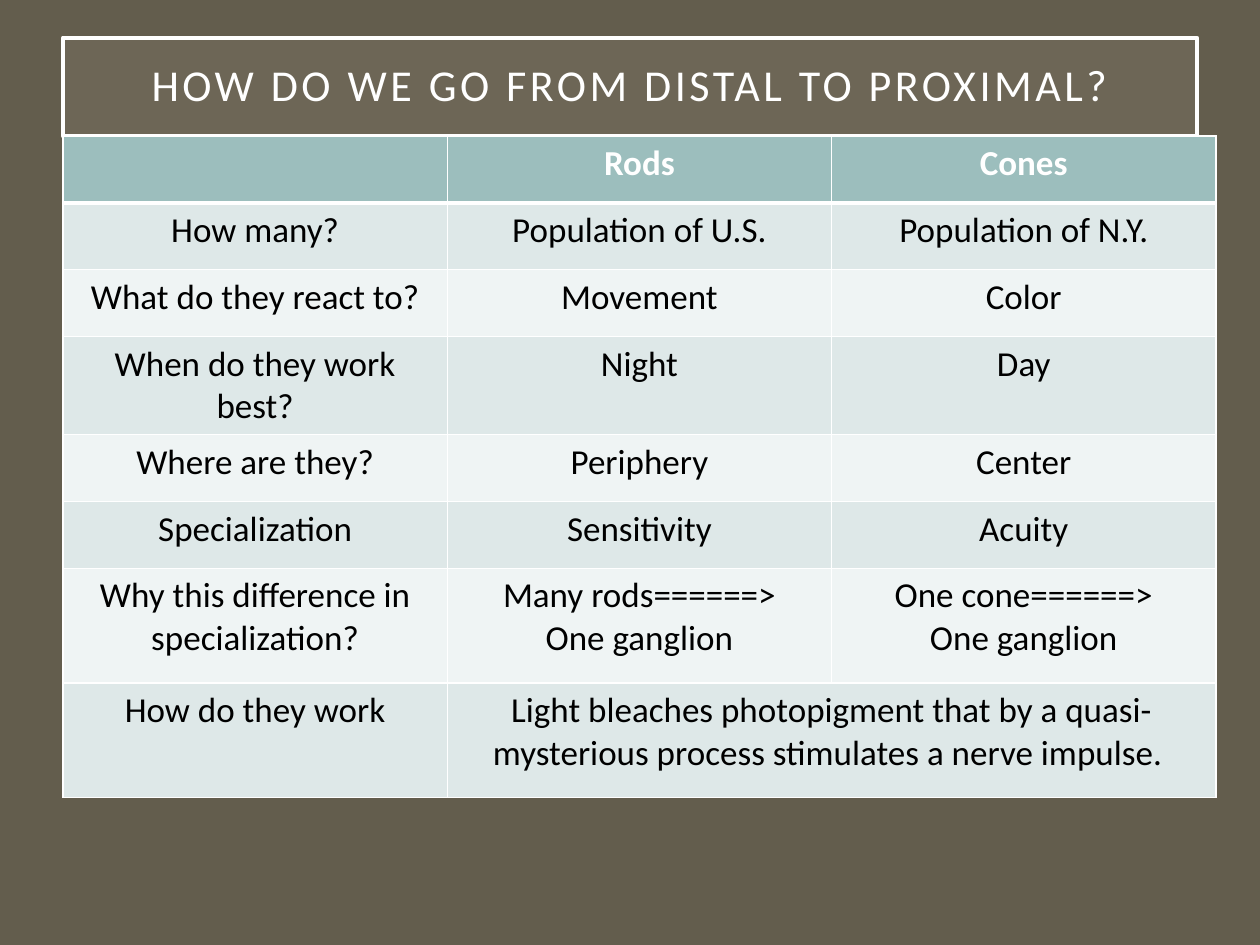
"""Build a slide with a table that compares rods and cones."""
import lxml.etree
import pptx
import pptx.dml.color
import pptx.enum.shapes
import pptx.enum.text
import pptx.oxml.ns
import pptx.util

COLORS = {
    "background": "635D4D", "title": "A7A08E", "white": "FFFFFF", "text": "000000",
    "header": "9CBEBD", "odd": "DEE8E8", "even": "EFF4F4",
}
COMPARISON = [
    ("", "Rods", "Cones"),
    ("How many?", "Population of U.S.", "Population of N.Y."),
    ("What do they react to?", "Movement", "Color"),
    ("When do they work best?", "Night", "Day"),
    ("Where are they?", "Periphery", "Center"),
    ("Specialization", "Sensitivity", "Acuity"),
    ("Why this difference in specialization?",
     "Many rods======>\nOne ganglion", "One cone======>\nOne ganglion"),
    ("How do they work",
     "Light bleaches photopigment that by a quasi-mysterious process "
     "stimulates a nerve impulse. ", ""),
]
ROW_HEIGHTS = [0.53] * 6 + [0.91] * 2
COLUMN_WIDTH = 3.05
inches = pptx.util.Inches
qn = pptx.oxml.ns.qn


def rgb(name):
    return pptx.dml.color.RGBColor.from_string(COLORS[name])


def add_border(cell, side, points):
    properties = cell._tc.get_or_add_tcPr()
    border = lxml.etree.SubElement(
        properties, qn(f"a:ln{side}"), w=str(pptx.util.Pt(points)))
    fill = lxml.etree.SubElement(border, qn("a:solidFill"))
    lxml.etree.SubElement(fill, qn("a:srgbClr"), val=COLORS["white"])


deck = pptx.Presentation()
deck.slide_width, deck.slide_height = inches(10), inches(7.5)
slide = deck.slides.add_slide(deck.slide_layouts[6])
slide.background.fill.solid()
slide.background.fill.fore_color.rgb = rgb("background")

title = slide.shapes.add_shape(
    pptx.enum.shapes.MSO_SHAPE.RECTANGLE,
    inches(0.5), inches(0.3), inches(9), inches(0.78))
title.shadow.inherit = False
title.fill.solid()
title.fill.fore_color.rgb = rgb("title")
title_color = title._element.spPr.find(qn("a:solidFill"))[0]
lxml.etree.SubElement(title_color, qn("a:alpha"), val="15000")
title.line.color.rgb = rgb("white")
title.line.width = pptx.util.Pt(2.5)
frame = title.text_frame
frame.word_wrap = True
frame.vertical_anchor = pptx.enum.text.MSO_ANCHOR.MIDDLE
frame.margin_left = frame.margin_right = inches(0.2)
frame.margin_top = frame.margin_bottom = inches(0.2)
heading = frame.paragraphs[0]
heading.text = "HOW DO WE GO FROM DISTAL TO PROXIMAL?"
heading.alignment = pptx.enum.text.PP_ALIGN.CENTER
heading.line_spacing = 0.9
heading.font.name = "Calibri"
heading.font.size = pptx.util.Pt(25.2)
heading.font.color.rgb = rgb("white")
heading.runs[0]._r.get_or_add_rPr().set("spc", "200")

table = slide.shapes.add_table(
    len(COMPARISON), 3, inches(0.5), inches(1.08),
    inches(3 * COLUMN_WIDTH), inches(sum(ROW_HEIGHTS))).table
for column in table.columns:
    column.width = inches(COLUMN_WIDTH)
for row, height in zip(table.rows, ROW_HEIGHTS):
    row.height = inches(height)
table.cell(7, 1).merge(table.cell(7, 2))

for row, entries in enumerate(COMPARISON):
    band = "header" if row == 0 else "odd" if row % 2 else "even"
    for column, entry in enumerate(entries):
        cell = table.cell(row, column)
        add_border(cell, "L", 1)
        add_border(cell, "R", 1)
        add_border(cell, "T", 3 if row == 1 else 1)
        add_border(cell, "B", 3 if row == 0 else 1)
        cell.fill.solid()
        cell.fill.fore_color.rgb = rgb(band)
        paragraph = cell.text_frame.paragraphs[0]
        paragraph.text = entry
        paragraph.alignment = pptx.enum.text.PP_ALIGN.CENTER
        paragraph.font.name = "Calibri"
        paragraph.font.size = pptx.util.Pt(20)
        paragraph.font.bold = row == 0
        paragraph.font.color.rgb = rgb("white" if row == 0 else "text")

deck.save("out.pptx")
